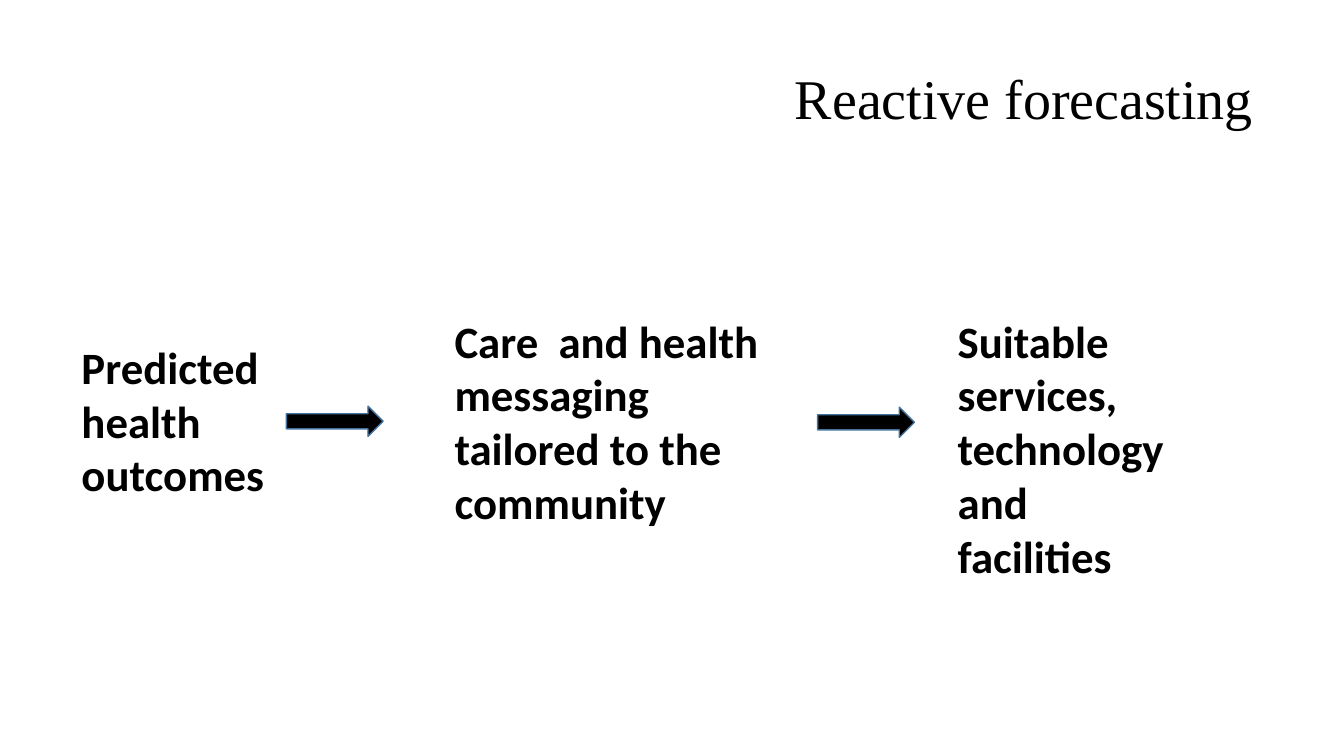
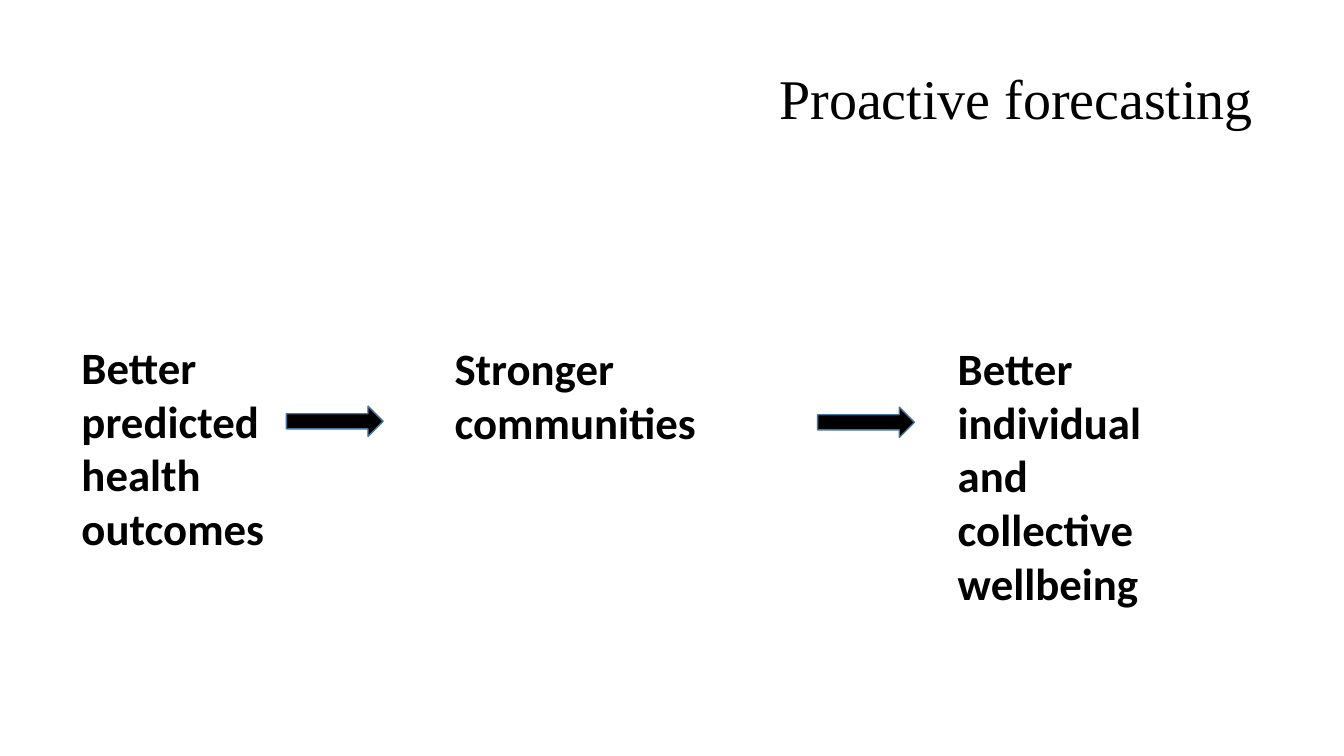
import pptx
import pptx.util
import pptx.dml.color
import pptx.enum.shapes
import pptx.enum.text
from dataclasses import dataclass

Inches = pptx.util.Inches
Pt = pptx.util.Pt
Color = pptx.dml.color.RGBColor
Align = pptx.enum.text.PP_ALIGN
Anchor = pptx.enum.text.MSO_ANCHOR
Fit = pptx.enum.text.MSO_AUTO_SIZE
Shape = pptx.enum.shapes.MSO_SHAPE


@dataclass(frozen=True)
class Theme:
    ink: Color = Color.from_string("000000")
    edge: Color = Color.from_string("43739E")
    paper: Color = Color.from_string("FFFFFF")
    serif: str = "Times New Roman"
    sans: str = "Calibri"
    title: int = 40
    body: int = 32


class Deck:
    def __init__(self, theme):
        self.theme = theme
        self.prs = pptx.Presentation()
        self.prs.slide_width = Inches(13.33)
        self.prs.slide_height = Inches(7.5)
        self.slide = None

    def page(self, text):
        self.slide = self.prs.slides.add_slide(self.prs.slide_layouts[5])
        fill = self.slide.background.fill
        fill.solid()
        fill.fore_color.rgb = self.theme.paper
        title = self.slide.shapes.title
        title.left, title.top = Inches(0.71), Inches(0.6)
        title.width, title.height = Inches(11.82), Inches(0.82)
        frame = title.text_frame
        frame.auto_size = Fit.NONE
        frame.vertical_anchor = Anchor.MIDDLE
        self.label(frame, text, self.theme.serif, self.theme.title, False)
        para = frame.paragraphs[0]
        para.alignment = Align.RIGHT
        para.line_spacing = 0.9

    def label(self, frame, text, face, size, bold):
        frame.text = text
        frame.word_wrap = True
        font = frame.paragraphs[0].runs[0].font
        font.name, font.size, font.bold = face, Pt(size), bold
        font.color.rgb = self.theme.ink

    def step(self, text, left, top, width, height):
        box = self.slide.shapes.add_textbox(
            Inches(left), Inches(top), Inches(width), Inches(height))
        self.label(box.text_frame, text, self.theme.sans, self.theme.body, True)
        box.text_frame.auto_size = Fit.SHAPE_TO_FIT_TEXT

    def arrow(self, left, top):
        arrow = self.slide.shapes.add_shape(
            Shape.RIGHT_ARROW, Inches(left), Inches(top), Inches(0.96), Inches(0.3))
        arrow.shadow.inherit = False
        arrow.fill.solid()
        arrow.fill.fore_color.rgb = self.theme.ink
        arrow.line.color.rgb = self.theme.edge
        arrow.line.width = Pt(1)

    def flow(self, title, steps):
        self.page(title)
        for (left, width), (text, top, height) in zip(COLUMNS, steps):
            self.step(text, left, top, width, height)
        for left, top in ARROWS:
            self.arrow(left, top)


COLUMNS = [(0.71, 2.52), (4.41, 3.37), (9.4, 2.52)]
ARROWS = [(2.84, 4.03), (8.11, 4.04)]
FLOWS = {
    "Reactive forecasting": [
        ("Predicted health outcomes", 3.32, 1.72),
        ("Care  and health messaging tailored to the community", 3.06, 2.26),
        ("Suitable services, technology and facilities", 3.06, 2.26),
    ],
    "Proactive forecasting": [
        ("Better predicted health outcomes", 3.32, 2.26),
        ("Stronger communities", 3.33, 1.18),
        ("Better individual and collective wellbeing", 3.33, 2.79),
    ],
}


def main():
    deck = Deck(Theme())
    for title, steps in FLOWS.items():
        deck.flow(title, steps)
    deck.prs.save("out.pptx")


if __name__ == "__main__":
    main()
